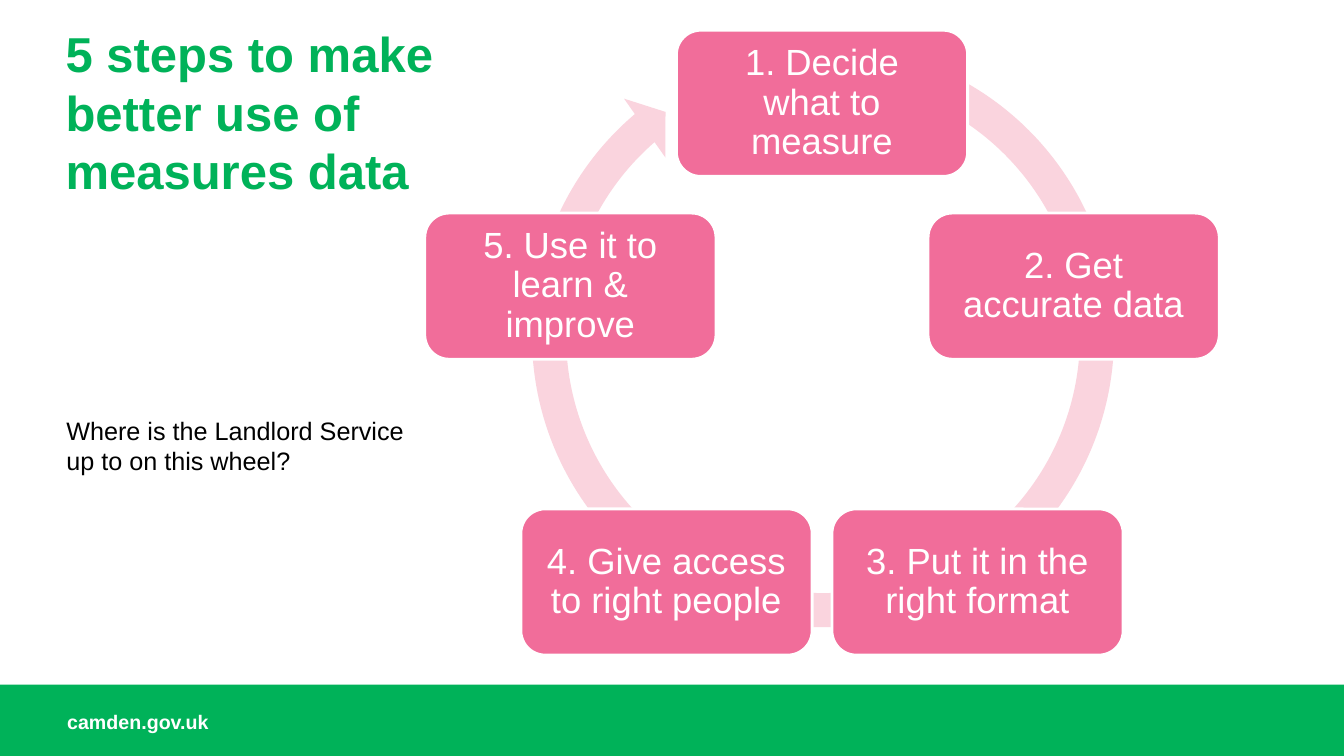
import math

from pptx import Presentation
from pptx.dml.color import RGBColor
from pptx.enum import shapes, text
from pptx.util import Pt

# Content
TITLE = "5 steps to make better use of measures data"
QUESTION = "Where is the Landlord Service up to on this wheel?"
FOOTER = "camden.gov.uk"
STEPS = [
    "1. Decide what to measure",
    "2. Get accurate data",
    "3. Put it in the right format",
    "4. Give access to right people",
    "5. Use it to learn & improve",
]

# Style and geometry, in points
GREEN, PINK, PALE_PINK = "00B259", "F16D9A", "FAD4DE"
WHITE, BLACK = "FFFFFF", "000000"
PAGE_W, PAGE_H = 960, 540
BAR_TOP = 489
WHEEL_X, WHEEL_Y, WHEEL_RADIUS = 587.2, 262.8, 189
STEP_W, STEP_H = 208, 104.4
ARROW_AT = (366.5, 18.7, 442.8, 442.8)
ARROW_ADJUSTMENTS = (0.055, 3.307, 137.641, 173.932, 0.058)


def colour(hex_code):
    return RGBColor.from_string(hex_code)


def write(frame, words, size, hex_code, bold=False, insets=(0, 0, 0, 0)):
    frame.word_wrap = True
    (frame.margin_left, frame.margin_top,
     frame.margin_right, frame.margin_bottom) = map(Pt, insets)
    para = frame.paragraphs[0]
    para.text = words
    para.font.name = "Arial"
    para.font.size = Pt(size)
    para.font.bold = bold
    para.font.color.rgb = colour(hex_code)
    return para


def add_box(page, at, *style, **options):
    box = page.shapes.add_textbox(*map(Pt, at))
    write(box.text_frame, *style, **options)


def add_filled(page, kind, at, fill):
    shape = page.shapes.add_shape(kind, *map(Pt, at))
    shape.shadow.inherit = False
    shape.fill.solid()
    shape.fill.fore_color.rgb = colour(fill)
    shape.line.fill.background()
    return shape


def add_step(page, index, words):
    angle = 2 * math.pi * index / len(STEPS)
    left = WHEEL_X + WHEEL_RADIUS * math.sin(angle) - STEP_W / 2
    top = WHEEL_Y - WHEEL_RADIUS * math.cos(angle) - STEP_H / 2
    step = add_filled(page, shapes.MSO_SHAPE.ROUNDED_RECTANGLE,
                      (left, top, STEP_W, STEP_H), PINK)
    step.line.color.rgb = colour(WHITE)
    step.line.width = Pt(2)
    step.text_frame.vertical_anchor = text.MSO_ANCHOR.MIDDLE
    para = write(step.text_frame, words, 26, WHITE, insets=(13, 13, 13, 13))
    para.alignment = text.PP_ALIGN.CENTER
    para.line_spacing = 0.9


def main():
    deck = Presentation()
    deck.slide_width, deck.slide_height = Pt(PAGE_W), Pt(PAGE_H)
    page = deck.slides.add_slide(deck.slide_layouts[6])

    # Footer bar
    add_filled(page, shapes.MSO_SHAPE.RECTANGLE,
               (0, BAR_TOP, PAGE_W, PAGE_H - BAR_TOP), GREEN)
    add_box(page, (48, 507, 395, 17), FOOTER, 14, WHITE, bold=True)

    # Title and question
    add_box(page, (46.8, 16.6, 289.4, 90), TITLE, 35, GREEN, bold=True)
    add_box(page, (40.3, 293, 263.5, 51), QUESTION, 18, BLACK,
            insets=(7.2, 3.6, 7.2, 3.6))

    # Wheel: arrow behind, steps evenly spaced clockwise from the top
    arrow = add_filled(page, shapes.MSO_SHAPE.CIRCULAR_ARROW, ARROW_AT, PALE_PINK)
    for index, value in enumerate(ARROW_ADJUSTMENTS):
        arrow.adjustments[index] = value
    for index, words in enumerate(STEPS):
        add_step(page, index, words)

    deck.save("out.pptx")


if __name__ == "__main__":
    main()
